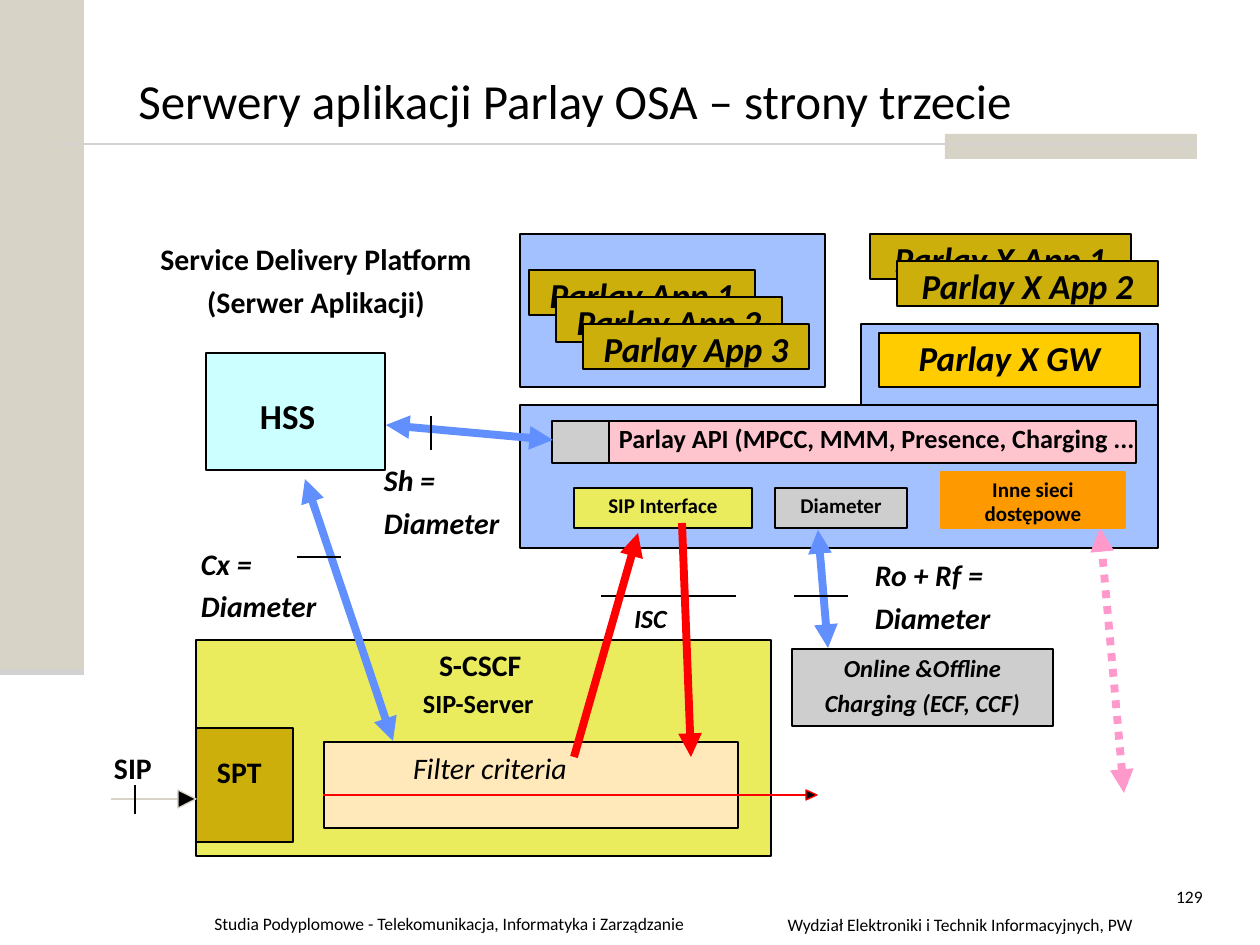
"""Builds the slide on Parlay OSA application servers run by third parties."""
import dataclasses
import typing

import lxml.etree
import pptx
import pptx.dml.color
import pptx.enum.dml
import pptx.enum.shapes
import pptx.enum.text
import pptx.oxml.ns
import pptx.util

SCALE = 914400 / 126
FONT = "Calibri"
COLOURS = {
    "black": "000000", "band": "D8D3C7", "rule": "D4D2D0", "panel": "A2C1FE",
    "grey": "CECECE", "olive": "CCAF0A", "pink": "FFC5CF", "lime": "EAEC5E",
    "cyan": "CCFFFF", "cream": "FFE8B9", "gold": "FFCC00", "orange": "FF9900",
    "red": "FF0000", "blue": "618FFD", "rose": "FF99CC",
}
LEFT = pptx.enum.text.PP_ALIGN.LEFT
CENTRE = pptx.enum.text.PP_ALIGN.CENTER
RIGHT = pptx.enum.text.PP_ALIGN.RIGHT
TOP = pptx.enum.text.MSO_ANCHOR.TOP
MIDDLE = pptx.enum.text.MSO_ANCHOR.MIDDLE


@dataclasses.dataclass
class Words:
    lines: list[str]
    size: int
    bold: bool = True
    italic: bool = False
    align: typing.Any = CENTRE
    spacing: float = 0.95


@dataclasses.dataclass
class Box:
    x: int
    y: int
    width: int
    height: int
    fill: str
    outline: str | None = "black"
    words: Words | None = None


@dataclasses.dataclass
class Label:
    x: int
    y: int
    width: int
    height: int
    words: Words
    inset: bool = False
    anchor: typing.Any = TOP


@dataclasses.dataclass
class Line:
    x1: int
    y1: int
    x2: int
    y2: int
    colour: str = "black"
    weight: float = 1
    head: bool = False
    tail: bool = False
    dotted: bool = False


@dataclasses.dataclass
class Tip:
    x: int
    y: int
    length: int
    half: int
    outline: str


def px(value: int) -> int:
    """Turn pixels into EMU."""
    return pptx.util.Emu(round(value * SCALE))


def colour(name: str) -> pptx.dml.color.RGBColor:
    """Look up a named colour."""
    return pptx.dml.color.RGBColor.from_string(COLOURS[name])


def write(frame: typing.Any, words: Words) -> None:
    """Fill a text frame, one paragraph for each line."""
    frame.word_wrap = True
    for index, line in enumerate(words.lines):
        para = frame.add_paragraph() if index else frame.paragraphs[0]
        para.alignment = words.align
        para.line_spacing = words.spacing
        para.space_before = pptx.util.Pt(round(0.3 * words.size, 1) if index else 0)
        span = para.add_run()
        span.text = line
        span.font.name = FONT
        span.font.size = pptx.util.Pt(words.size)
        span.font.bold = words.bold
        span.font.italic = words.italic
        span.font.color.rgb = colour("black")


def paint(shape: typing.Any, fill: str, outline: str | None, weight: float) -> None:
    """Give a shape a plain fill and outline without shadow."""
    shape.shadow.inherit = False
    shape.fill.solid()
    shape.fill.fore_color.rgb = colour(fill)
    if outline is None:
        shape.line.fill.background()
    else:
        shape.line.color.rgb = colour(outline)
        shape.line.width = pptx.util.Pt(weight)


def draw_box(page: typing.Any, box: Box) -> None:
    """Draw a rectangle with its optional words at the top."""
    shape = page.shapes.add_shape(
        pptx.enum.shapes.MSO_SHAPE.RECTANGLE,
        px(box.x), px(box.y), px(box.width), px(box.height))
    paint(shape, box.fill, box.outline, 1.13)
    if box.words:
        shape.text_frame.vertical_anchor = TOP
        write(shape.text_frame, box.words)


def draw_label(page: typing.Any, label: Label) -> None:
    """Draw free text, with or without insets."""
    frame = page.shapes.add_textbox(
        px(label.x), px(label.y), px(label.width), px(label.height)).text_frame
    frame.vertical_anchor = label.anchor
    if not label.inset:
        frame.margin_left = frame.margin_right = frame.margin_top = frame.margin_bottom = 0
    write(frame, label.words)


def draw_line(page: typing.Any, line: Line) -> None:
    """Draw a straight line with optional arrowheads."""
    link = page.shapes.add_connector(
        pptx.enum.shapes.MSO_CONNECTOR.STRAIGHT,
        px(line.x1), px(line.y1), px(line.x2), px(line.y2))
    link.line.color.rgb = colour(line.colour)
    link.line.width = pptx.util.Pt(line.weight)
    if line.dotted:
        link.line.dash_style = pptx.enum.dml.MSO_LINE.ROUND_DOT
    stroke = link.line._get_or_add_ln()
    for tag, wanted in (("a:headEnd", line.head), ("a:tailEnd", line.tail)):
        if wanted:
            lxml.etree.SubElement(stroke, pptx.oxml.ns.qn(tag), type="triangle")
    lxml.etree.SubElement(link._element.spPr, pptx.oxml.ns.qn("a:effectLst"))


def draw_tip(page: typing.Any, tip: Tip) -> None:
    """Draw a black triangle that points right."""
    outline = page.shapes.build_freeform(tip.x, tip.y + tip.half, scale=SCALE)
    outline.add_line_segments([(tip.x + tip.length, tip.y), (tip.x, tip.y - tip.half)])
    paint(outline.convert_to_shape(), "black", tip.outline, 0.75)


def app(name: str) -> Words:
    """Style the name of an application."""
    return Words([name], 20, italic=True)


def interface(name: str) -> Words:
    """Style the name of a network interface."""
    return Words([name], 12)


def protocol(x: int, y: int, name: str) -> Label:
    """Describe the label of a Diameter reference point."""
    return Label(x, y, 126, 79, Words([name, "Diameter"], 17, italic=True, align=LEFT))


def note(text: str, align: typing.Any) -> Words:
    """Style a footer text."""
    return Words([text], 10, bold=False, align=align, spacing=1)


BANDS = [Box(0, 0, 84, 672, "band", None), Box(945, 134, 252, 25, "band", None)]
RULES = [Line(53, 144, 1197, 144, "rule", 1.5), Line(0, 672, 84, 672, "rule", 3.5)]
BOXES = [
    Box(861, 324, 297, 81, "panel"),
    Box(520, 234, 305, 153, "panel"),
    Box(792, 649, 261, 77, "grey", words=Words(
        ["Online &Offline", "Charging (ECF, CCF)"], 14, italic=True)),
    Box(520, 405, 638, 143, "panel"),
    Box(609, 421, 527, 42, "pink"),
    Box(552, 421, 57, 42, "grey"),
    Box(574, 488, 178, 40, "lime", words=interface("SIP Interface")),
    Box(775, 488, 132, 40, "grey", words=interface("Diameter")),
    Box(941, 472, 184, 56, "orange", "orange", interface("Inne sieci dostępowe")),
    Box(206, 353, 179, 117, "cyan"),
    Box(196, 640, 575, 216, "lime"),
    Box(196, 728, 97, 114, "olive"),
    Box(324, 742, 414, 86, "cream"),
    Box(879, 333, 261, 54, "gold", words=app("Parlay X GW")),
    *(Box(529 + 27 * step, 270 + 27 * step, 226, 45, "olive",
          words=app(f"Parlay App {step + 1}")) for step in range(3)),
    *(Box(870 + 27 * step, 234 + 27 * step, 261, 45, "olive",
          words=app(f"Parlay X App {step + 1}")) for step in range(2)),
]
LABELS = [
    Label(126, 35, 1071, 130, Words(
        ["Serwery aplikacji Parlay OSA – strony trzecie"], 28, False, align=LEFT, spacing=1),
        True, MIDDLE),
    Label(155, 243, 322, 79, Words(["Service Delivery Platform", "(Serwer Aplikacji)"], 17)),
    Label(619, 425, 530, 30, Words(
        ["Parlay API (MPCC, MMM, Presence, Charging ..."], 15, align=LEFT)),
    Label(260, 398, 70, 40, Words(["HSS"], 20, align=LEFT)),
    Label(439, 649, 95, 34, Words(["S-CSCF"], 17, align=LEFT)),
    Label(423, 690, 124, 30, Words(["SIP-Server"], 15, align=LEFT)),
    Label(217, 756, 60, 34, Words(["SPT"], 17, align=LEFT)),
    Label(413, 752, 172, 34, Words(["Filter criteria"], 17, False, True, LEFT)),
    Label(634, 605, 45, 30, Words(["ISC"], 15, italic=True, align=LEFT)),
    Label(114, 752, 50, 34, Words(["SIP"], 17, align=LEFT)),
    protocol(384, 464, "Sh ="),
    protocol(201, 548, "Cx ="),
    protocol(875, 559, "Ro + Rf ="),
    Label(202, 907, 562, 35, note(
        "Studia Podyplomowe - Telekomunikacja, Informatyka i Zarządzanie", LEFT), True),
    Label(755, 908, 410, 34, note("Wydział Elektroniki i Technik Informacyjnych, PW", CENTRE), True),
    Label(1154, 880, 61, 63, note("129", RIGHT), True),
]
LINES = [
    Line(323, 795, 806, 795, "red", 1.13),
    Line(111, 799, 179, 799, "band", 1.13),
    Line(601, 596, 736, 596, weight=1.13),
    Line(135, 785, 135, 814, weight=1.13),
    Line(305, 479, 393, 741, "blue", 4.5, True, True),
    Line(386, 425, 553, 440, "blue", 4.5, True, True),
    Line(297, 557, 341, 557),
    Line(431, 416, 431, 450),
    Line(574, 757, 638, 533, "red", 4.5, tail=True),
    Line(682, 523, 691, 757, "red", 4.5, tail=True),
    Line(828, 648, 818, 530, "blue", 4.5, True, True),
    Line(848, 596, 794, 596),
    Line(1124, 793, 1100, 528, "rose", 4.5, True, True, True),
]
TIPS = [Tip(806, 795, 11, 5, "red"), Tip(178, 799, 18, 9, "band")]


def main() -> None:
    """Build and save the deck."""
    deck = pptx.Presentation()
    deck.slide_width, deck.slide_height = px(1260), px(945)
    page = deck.slides.add_slide(deck.slide_layouts[6])
    for draw, items in ((draw_box, BANDS), (draw_line, RULES), (draw_box, BOXES),
                        (draw_label, LABELS), (draw_line, LINES), (draw_tip, TIPS)):
        for item in items:
            draw(page, item)
    deck.save("out.pptx")


if __name__ == "__main__":
    main()
